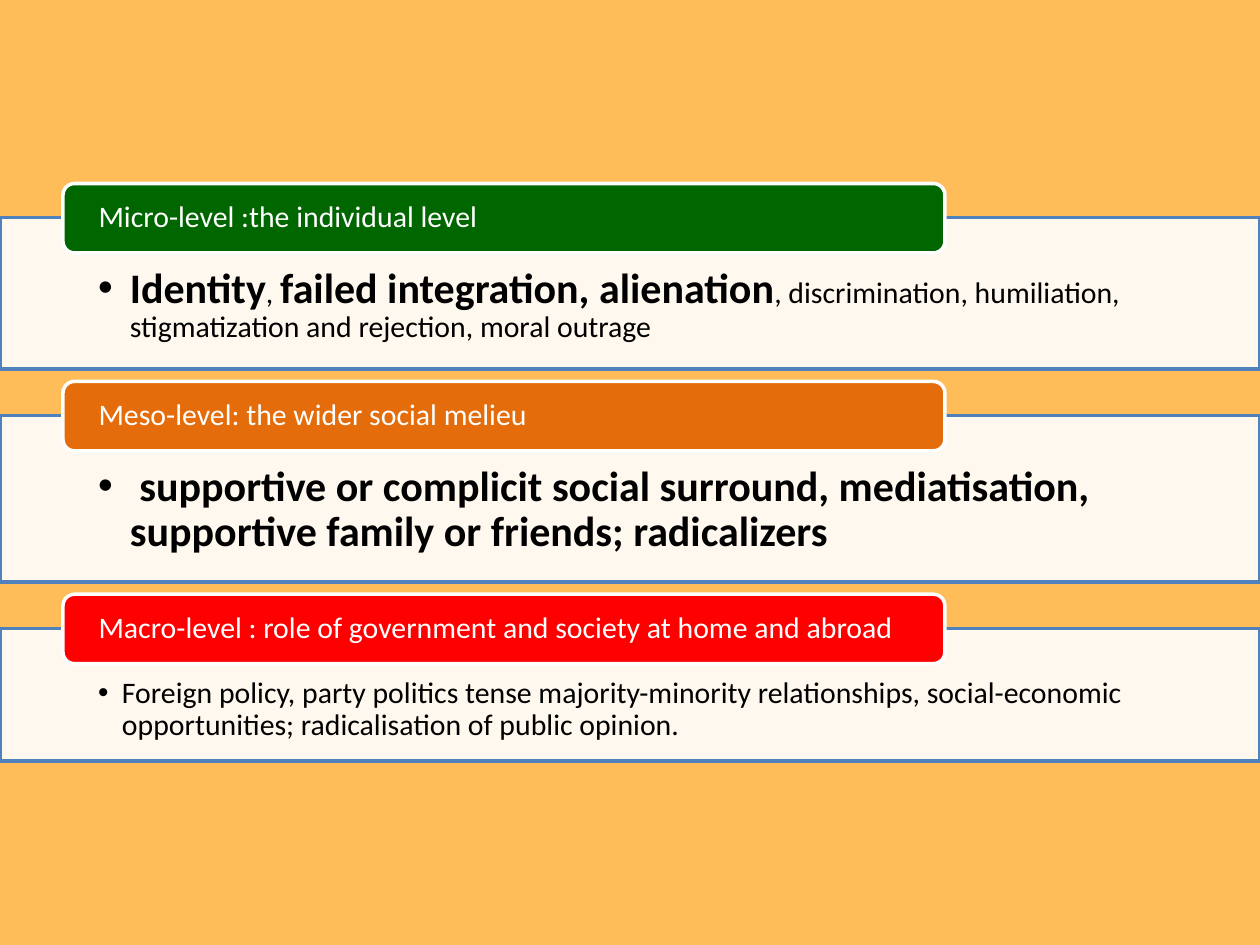
"""Build a slide with three stacked levels, each a coloured tab over a bulleted band."""
from dataclasses import dataclass

from lxml.etree import SubElement
from pptx import Presentation
from pptx.dml.color import RGBColor
from pptx.enum.shapes import MSO_SHAPE as Shape
from pptx.enum.text import MSO_ANCHOR as Anchor, PP_ALIGN as Align
from pptx.oxml.ns import qn
from pptx.util import Cm, Pt

LEVELS = [
    {"title": "Micro-level :the individual level", "color": "006600",
     "height": 3.05, "indent": 0.64, "bottom": 0.48,
     "runs": [("Identity", True), (", ", False),
              ("failed integration, alienation", True),
              (", discrimination, humiliation, stigmatization and rejection, "
               "moral outrage", False)]},
    {"title": "Meso-level: the wider social melieu", "color": "E46C0A",
     "height": 3.35, "indent": 0.64, "bottom": 0.48,
     "runs": [(" supportive or complicit social surround, mediatisation, "
               "supportive family or friends; radicalizers", True)]},
    {"title": "Macro-level : role of government and society at home and abroad",
     "color": "FF0000", "height": 2.67, "indent": 0.48, "bottom": 0.33,
     "runs": [("Foreign policy, party politics tense majority-minority relationships, "
               "social-economic opportunities; radicalisation of public opinion.", False)]},
]


@dataclass(frozen=True)
class Theme:
    font: str = "Calibri"
    background: str = "FEBD58"
    band: str = "FFFFFF"
    band_line: str = "4F81BD"
    tab_line: str = "FFFFFF"
    tab_text: str = "FFFFFF"
    body_text: str = "000000"
    normal: int = 17
    strong: int = 24
    line: int = 2
    opacity: int = 90


T = Theme()
WIDTH, HEIGHT = 25.4, 19.05
FIRST_TOP, GAP = 4.39, 0.94
TAB_LEFT, TAB_WIDTH, TAB_HEIGHT, TAB_RISE = 1.27, 17.78, 1.4, 0.69


def add_box(s, kind, box, fill, line):
    sp = s.shapes.add_shape(kind, *map(Cm, box))
    sp.shadow.inherit = False
    sp.fill.solid()
    sp.fill.fore_color.rgb = RGBColor.from_string(fill)
    sp.line.color.rgb = RGBColor.from_string(line)
    sp.line.width = Pt(T.line)
    return sp


def set_opacity(sp, percent):
    color = sp.fill._xPr.find(qn("a:solidFill"))[0]
    SubElement(color, qn("a:alpha"), val=str(percent * 1000))


def add_bullet(p, indent):
    pPr = p._p.get_or_add_pPr()
    pPr.set("marL", str(Cm(indent)))
    pPr.set("indent", str(-Cm(indent)))
    SubElement(pPr, qn("a:buFont"), typeface="Arial")
    SubElement(pPr, qn("a:buChar"), char="•")


def write_text(sp, runs, *, color, insets, anchor, indent=None):
    tf = sp.text_frame
    tf.word_wrap = True
    tf.vertical_anchor = anchor
    tf.margin_left, tf.margin_top, tf.margin_right, tf.margin_bottom = map(Cm, insets)
    p = tf.paragraphs[0]
    p.alignment = Align.LEFT
    p.line_spacing = 0.9
    if indent:
        add_bullet(p, indent)
    for text, strong in runs:
        r = p.add_run()
        r.text = text
        r.font.name = T.font
        r.font.size = Pt(T.strong if strong else T.normal)
        r.font.bold = strong
        r.font.color.rgb = RGBColor.from_string(color)


def add_level(s, level, top):
    band = add_box(s, Shape.RECTANGLE, (0, top, WIDTH, level["height"]),
                   T.band, T.band_line)
    set_opacity(band, T.opacity)
    write_text(band, level["runs"], color=T.body_text, anchor=Anchor.TOP,
               insets=(1.98, 0.99, 1.98, level["bottom"]), indent=level["indent"])
    tab = add_box(s, Shape.ROUNDED_RECTANGLE,
                  (TAB_LEFT, top - TAB_RISE, TAB_WIDTH, TAB_HEIGHT),
                  level["color"], T.tab_line)
    write_text(tab, [(level["title"], False)], color=T.tab_text,
               anchor=Anchor.MIDDLE, insets=(0.65, 0, 0.65, 0))


def main():
    prs = Presentation()
    prs.slide_width, prs.slide_height = Cm(WIDTH), Cm(HEIGHT)
    s = prs.slides.add_slide(prs.slide_layouts[6])
    s.background.fill.solid()
    s.background.fill.fore_color.rgb = RGBColor.from_string(T.background)
    top = FIRST_TOP
    for level in LEVELS:
        add_level(s, level, top)
        top += level["height"] + GAP
    prs.save("out.pptx")


if __name__ == "__main__":
    main()
